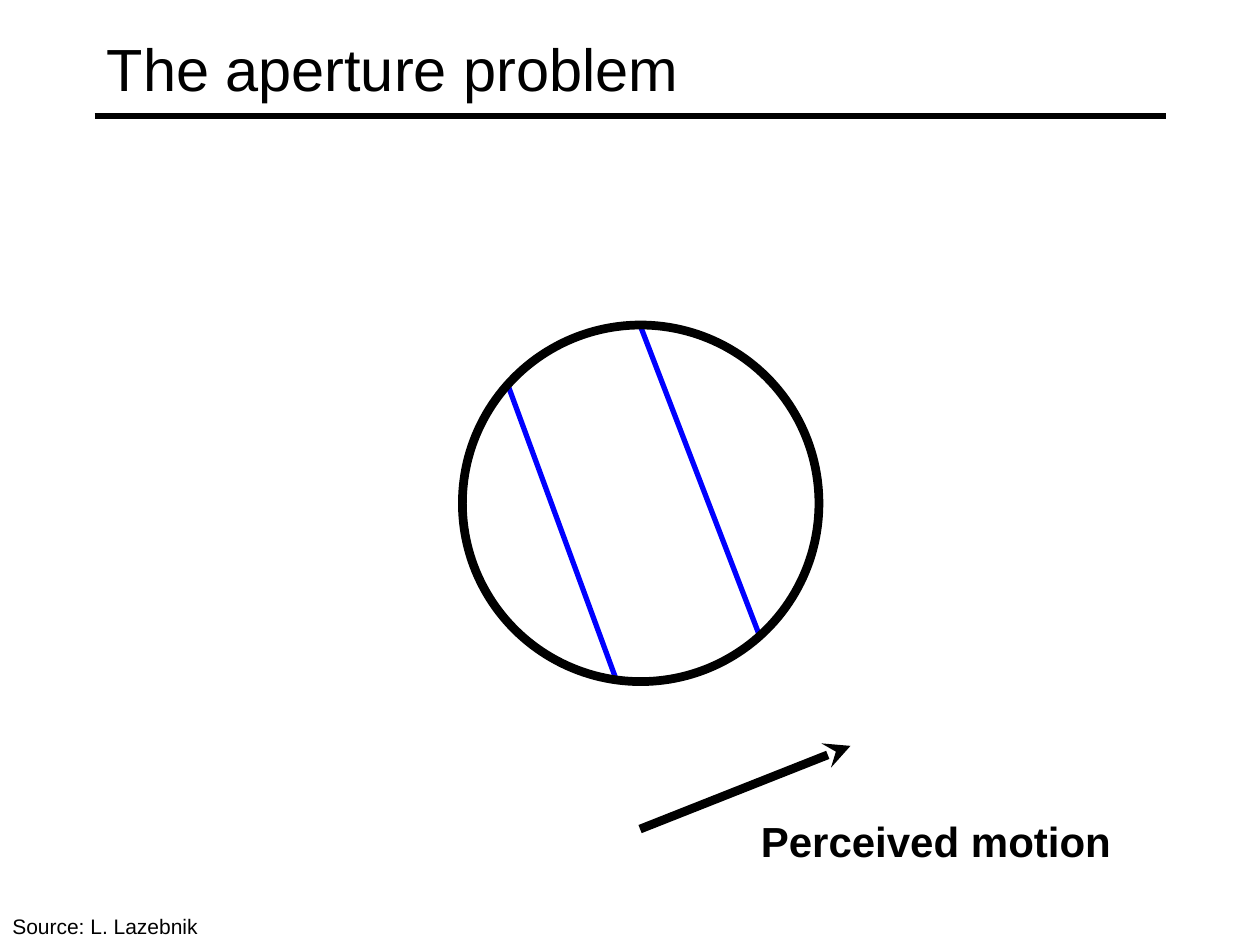
import lxml.etree
import pptx
import pptx.dml.color
import pptx.enum.shapes
import pptx.enum.text
import pptx.oxml.ns
import pptx.util
from pptx.util import Inches

BLACK = pptx.dml.color.RGBColor(0x00, 0x00, 0x00)
WHITE = pptx.dml.color.RGBColor(0xFF, 0xFF, 0xFF)
BLUE = pptx.dml.color.RGBColor(0x00, 0x00, 0xFF)
FONT = "Arial"


def write_text(shape, text, size, bold=False, wrap=True,
               anchor=pptx.enum.text.MSO_ANCHOR.TOP):
    frame = shape.text_frame
    frame.word_wrap = wrap
    frame.vertical_anchor = anchor
    paragraph = frame.paragraphs[0]
    paragraph.text = text
    paragraph.alignment = pptx.enum.text.PP_ALIGN.LEFT
    font = paragraph.font
    font.name = FONT
    font.size = pptx.util.Pt(size)
    font.bold = bold
    font.color.rgb = BLACK


def add_text(slide, left, top, width, height, text, size, **options):
    box = slide.shapes.add_textbox(
        Inches(left), Inches(top), Inches(width), Inches(height))
    write_text(box, text, size, **options)
    return box


def add_line(slide, start, end, color, width, arrow=False):
    line = slide.shapes.add_connector(
        pptx.enum.shapes.MSO_CONNECTOR.STRAIGHT,
        *(Inches(value) for value in (*start, *end)))
    line.line.color.rgb = color
    line.line.width = pptx.util.Pt(width)
    qn = pptx.oxml.ns.qn
    properties = line._element.find(qn("p:spPr"))
    if arrow:
        outline = properties.find(qn("a:ln"))
        lxml.etree.SubElement(outline, qn("a:tailEnd"), type="stealth")
    # An empty effect list removes the theme shadow
    lxml.etree.SubElement(properties, qn("a:effectLst"))


def add_aperture(slide, left, top, diameter):
    circle = slide.shapes.add_shape(
        pptx.enum.shapes.MSO_SHAPE.OVAL,
        Inches(left), Inches(top), Inches(diameter), Inches(diameter))
    circle.shadow.inherit = False
    circle.fill.background()
    circle.line.color.rgb = BLACK
    circle.line.width = pptx.util.Pt(5)


def main():
    presentation = pptx.Presentation()
    presentation.slide_width = Inches(10)
    presentation.slide_height = Inches(7.5)
    slide = presentation.slides.add_slide(presentation.slide_layouts[6])

    # Title and rule
    add_line(slide, (0.75, 0.92), (9.25, 0.92), BLACK, 3)
    add_text(slide, 0.75, 0.08, 8.5, 0.92, "The aperture problem", 34,
             anchor=pptx.enum.text.MSO_ANCHOR.MIDDLE)

    # Moving edges seen through the round aperture
    add_line(slide, (4.04, 3.08), (4.9, 5.42), BLUE, 3)
    add_line(slide, (5.08, 2.58), (6.03, 5.05), BLUE, 3)
    add_aperture(slide, 3.67, 2.58, 2.83)

    # Motion arrow and its label
    add_line(slide, (5.08, 6.58), (6.75, 5.92), BLACK, 5, arrow=True)
    add_text(slide, 5.94, 6.42, 2.98, 0.5, "Perceived motion", 24,
             bold=True, wrap=False)

    # Source note
    source = add_text(slide, 0, 7.2, 1.93, 0.3, "Source: L. Lazebnik", 12)
    source.fill.solid()
    source.fill.fore_color.rgb = WHITE

    presentation.save("out.pptx")


if __name__ == "__main__":
    main()
